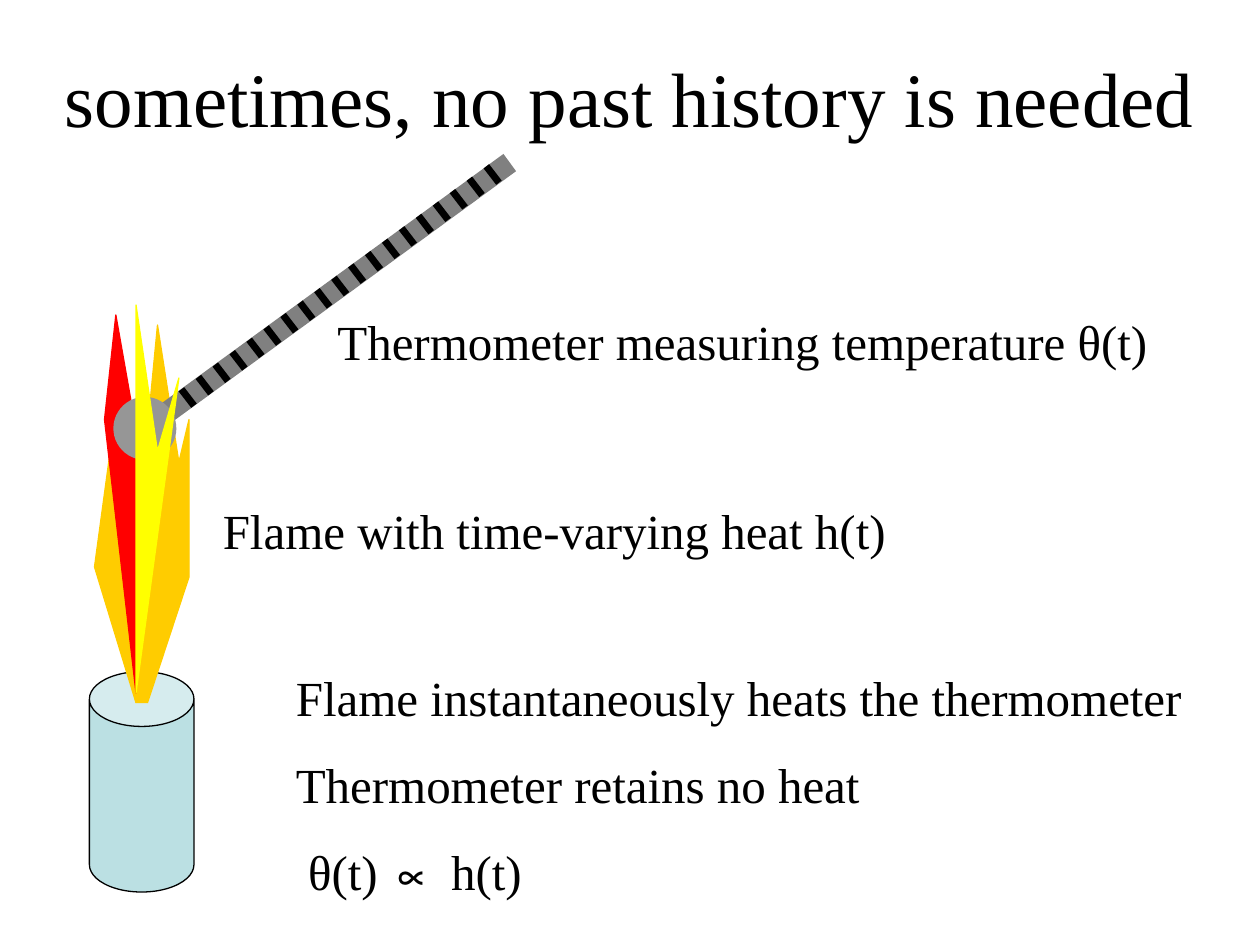
"""Build a slide on a thermometer that follows a flame without memory."""
import pptx
import pptx.dml.color
import pptx.enum.shapes
import pptx.enum.text
import pptx.util
from lxml import etree

Inches = pptx.util.Inches
RGBColor = pptx.dml.color.RGBColor
SHAPES = pptx.enum.shapes.MSO_SHAPE

COLORS = {
    "black": "000000", "can": "BBE0E3", "orange": "FFCC00", "red": "FF0000",
    "yellow": "FFFF00", "stem": "808080", "bulb": "969696",
}
FONT = {"name": "Times New Roman", "bold": False}
ALIGN = pptx.enum.text.PP_ALIGN
ANCHOR = pptx.enum.text.MSO_ANCHOR


def paint(shape, fill, line=None):
    shape.shadow.inherit = False
    shape.fill.solid()
    shape.fill.fore_color.rgb = RGBColor.from_string(COLORS[fill])
    if line:
        shape.line.color.rgb = RGBColor.from_string(COLORS[line])
        shape.line.width = pptx.util.Pt(0.75)
    else:
        shape.line.fill.background()


def write(shape, box, lines, size, alignment, anchor):
    for name, value in zip(("left", "top", "width", "height"), box):
        setattr(shape, name, Inches(value))
    frame = shape.text_frame
    frame.word_wrap = True
    frame.auto_size = pptx.enum.text.MSO_AUTO_SIZE.NONE
    frame.vertical_anchor = anchor
    for index, line in enumerate(lines):
        paragraph = frame.add_paragraph() if index else frame.paragraphs[0]
        paragraph.alignment = alignment
        paragraph.space_before = pptx.util.Pt(16 if index else 0)
        run = paragraph.add_run()
        run.text = line
        for name, value in {**FONT, "size": pptx.util.Pt(size)}.items():
            setattr(run.font, name, value)
        run.font.color.rgb = RGBColor.from_string(COLORS["black"])


presentation = pptx.Presentation()
presentation.slide_width = Inches(10)
presentation.slide_height = Inches(7.5)
slide = presentation.slides.add_slide(presentation.slide_layouts[5])

write(slide.shapes.title, (0, 0.25, 10, 1.03),
      ["sometimes, no past history is needed"], 44, ALIGN.CENTER, ANCHOR.MIDDLE)

burner = slide.shapes.add_shape(
    SHAPES.CAN, Inches(0.71), Inches(5.33), Inches(0.83), Inches(1.75))
burner.adjustments[0] = 0.525
paint(burner, "can", "black")

back_flames = [
    ("orange", [(1.08, 5.58), (0.75, 4.5), (0.92, 3.25), (1.17, 3.42), (1.25, 2.58),
                (1.42, 3.67), (1.5, 3.33), (1.5, 4.58), (1.17, 5.58)]),
    ("red", [(1.17, 3.92), (0.92, 2.5), (0.83, 3.33), (1.08, 5.5), (1.17, 3.83)]),
]
front_flames = [
    ("yellow", [(1.08, 5.08), (1.08, 2.42), (1.25, 3.58), (1.42, 3), (1.08, 5.5),
                (1.08, 5)]),
]

for flames in (back_flames, front_flames):
    if flames is front_flames:
        thermometer = slide.shapes.add_group_shape()
        for kind, box, color in (
            (SHAPES.RECTANGLE, (0.81, 2.26, 3.58, 0.17), "stem"),
            (SHAPES.OVAL, (0.9, 3.15, 0.5, 0.5), "bulb"),
        ):
            part = thermometer.shapes.add_shape(kind, *map(Inches, box))
            part.rotation = 323.9
            paint(part, color)
        for index in range(19):
            left = 1.44 + index * 2.42 / 18
            top = 3.09 - index * 1.77 / 18
            tick = thermometer.shapes.add_connector(
                pptx.enum.shapes.MSO_CONNECTOR.STRAIGHT,
                Inches(left), Inches(top), Inches(left + 0.1), Inches(top + 0.13))
            tick.line.color.rgb = RGBColor.from_string(COLORS["black"])
            tick.line.width = pptx.util.Pt(4)
            etree.SubElement(tick._element.spPr, pptx.oxml.ns.qn("a:effectLst"))
    for color, points in flames:
        corners = [(Inches(x), Inches(y)) for x, y in points]
        builder = slide.shapes.build_freeform(*corners[0])
        builder.add_line_segments(corners[1:], close=False)
        paint(builder.convert_to_shape(), color, color)

for box, lines in (
    ((1.67, 3.92, 6.17, 0.57), ["Flame with time-varying heat h(t)"]),
    ((2.58, 2.42, 7.42, 0.57), ["Thermometer measuring temperature θ(t)"]),
    ((2.25, 5.25, 7.58, 1.97), ["Flame instantaneously heats the thermometer",
                                "Thermometer retains no heat", " θ(t) ∝ h(t)"]),
):
    textbox = slide.shapes.add_textbox(*map(Inches, box))
    write(textbox, box, lines, 28, ALIGN.LEFT, ANCHOR.TOP)

presentation.save("out.pptx")
